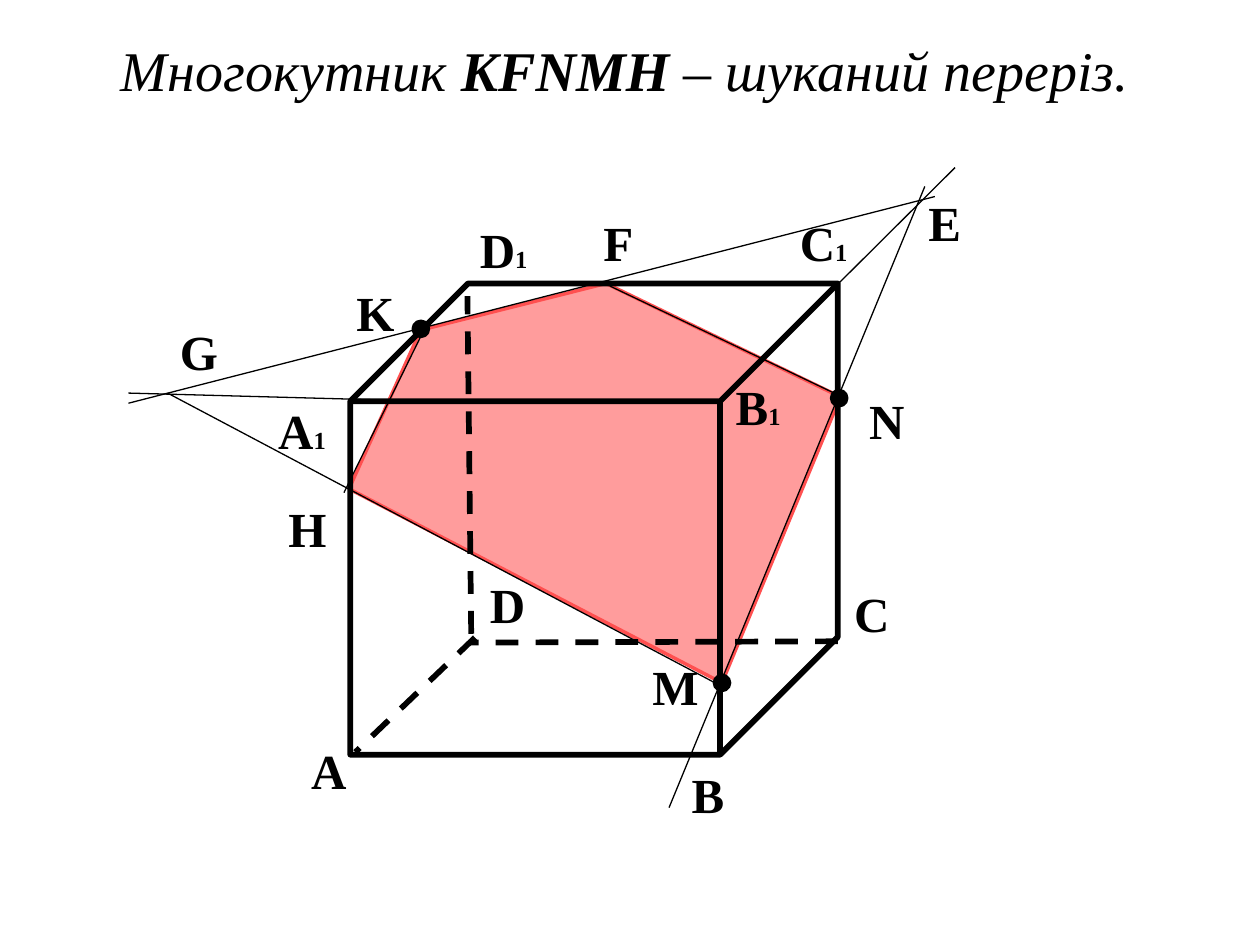
from lxml import etree
from pptx import Presentation
from pptx.dml.color import RGBColor
from pptx.enum import dml, shapes, text
from pptx.oxml.ns import qn
from pptx.util import Inches, Pt

COLORS = {"ink": "000000", "section": "FF5050"}
FONT = "Times New Roman"
INK = RGBColor.from_string(COLORS["ink"])
SECTION = RGBColor.from_string(COLORS["section"])

prs = Presentation()
prs.slide_width, prs.slide_height = Inches(10), Inches(7.5)
s = prs.slides.add_slide(prs.slide_layouts[6])


def add_text(x, y, w, h, runs, wrap=False):
    """Add a one-line box; runs are (text, size, bold, italic)."""
    tf = s.shapes.add_textbox(Inches(x), Inches(y), Inches(w), Inches(h)).text_frame
    tf.word_wrap = wrap
    tf.auto_size = text.MSO_AUTO_SIZE.SHAPE_TO_FIT_TEXT
    p = tf.paragraphs[0]
    for words, size, bold, italic in runs:
        r = p.add_run()
        r.text = words
        r.font.name, r.font.size = FONT, Pt(size)
        r.font.bold, r.font.italic = bold, italic
        r.font.color.rgb = INK


def add_line(x1, y1, x2, y2, width, dash=None):
    c = s.shapes.add_connector(shapes.MSO_CONNECTOR.STRAIGHT,
                               Inches(x1), Inches(y1), Inches(x2), Inches(y2))
    c.line.color.rgb = INK
    c.line.width = Pt(width)
    if dash:
        c.line.dash_style = dash
    etree.SubElement(c._element.spPr, qn("a:effectLst"))


# Section polygon K F N M H
H, K, F, N, M = [(Inches(x), Inches(y)) for x, y in
                 [(2.77, 3.88), (3.34, 2.62), (4.81, 2.25), (6.67, 3.15), (5.73, 5.42)]]
fb = s.shapes.build_freeform(*H)
fb.add_line_segments([K, F, N, M], close=True)
sp = fb.convert_to_shape()
sp.shadow.inherit = False
sp.fill.solid()
sp.fill.fore_color.rgb = SECTION
sp.line.color.rgb = SECTION
sp.line.width = Pt(2)
fill_color = sp._element.spPr.find(qn("a:solidFill"))[0]
etree.SubElement(fill_color, qn("a:alpha"), val="56000")

# Hidden edges, meeting near D
for edge in [(6.65, 5.09, 3.72, 5.1), (3.77, 5.06, 2.82, 5.97), (3.74, 5.03, 3.71, 2.35)]:
    add_line(*edge, 3.25, dml.MSO_LINE.DASH)

cube = s.shapes.add_shape(shapes.MSO_SHAPE.CUBE,
                          Inches(2.78), Inches(2.25), Inches(3.87), Inches(3.74))
cube.shadow.inherit = False
cube.fill.background()
cube.line.color.rgb = INK
cube.line.width = Pt(3.25)

# Given points M, N, K
DOT = 0.12
for x, y in [(5.67, 5.36), (6.6, 3.1), (3.28, 2.55)]:
    dot = s.shapes.add_shape(shapes.MSO_SHAPE.OVAL,
                             Inches(x), Inches(y), Inches(DOT), Inches(DOT))
    dot.shadow.inherit = False
    dot.fill.solid()
    dot.fill.fore_color.rgb = INK
    dot.line.color.rgb = INK
    dot.line.width = Pt(2)

# Construction lines: MN, B1C1, GE, NF, A1G, GM, KH
for ends in [(5.31, 6.41, 7.34, 1.48), (5.7, 3.2, 7.58, 1.33), (1.02, 3.2, 7.42, 1.56),
             (6.62, 3.12, 4.84, 2.27), (3.98, 3.2, 1.02, 3.12), (1.33, 3.12, 5.77, 5.47),
             (3.34, 2.67, 2.73, 3.91)]:
    add_line(*ends, 0.75)

# Point labels: letter, index, left, top, width
for letter, index, x, y, w in [
    ("А", "", 2.37, 5.83, 0.49), ("B", "", 5.39, 6.02, 0.46),
    ("C", "", 6.68, 4.58, 0.49), ("D", "", 3.79, 4.51, 0.49),
    ("А", "1", 2.11, 3.13, 0.58), ("B", "1", 5.74, 2.94, 0.56),
    ("C", "1", 6.25, 1.64, 0.58), ("D", "1", 3.71, 1.69, 0.58),
    ("K", "", 2.73, 2.19, 0.51), ("N", "", 6.8, 3.05, 0.49),
    ("M", "", 5.08, 5.16, 0.57), ("Е", "", 7.27, 1.48, 0.46),
    ("F", "", 4.69, 1.64, 0.44), ("G", "", 1.33, 2.5, 0.51),
    ("H", "", 2.19, 3.91, 0.51),
]:
    runs = [(letter, 28, True, False)]
    if index:
        runs.append((index, 14, True, False))
    add_text(x, y, w, 0.57, runs)

add_text(0.86, 0.23, 8.52, 0.64,
         [("Многокутник ", 32, False, True), ("KFNMH", 32, True, True),
          (" – шуканий переріз.", 32, False, True)], wrap=True)

prs.save("out.pptx")
